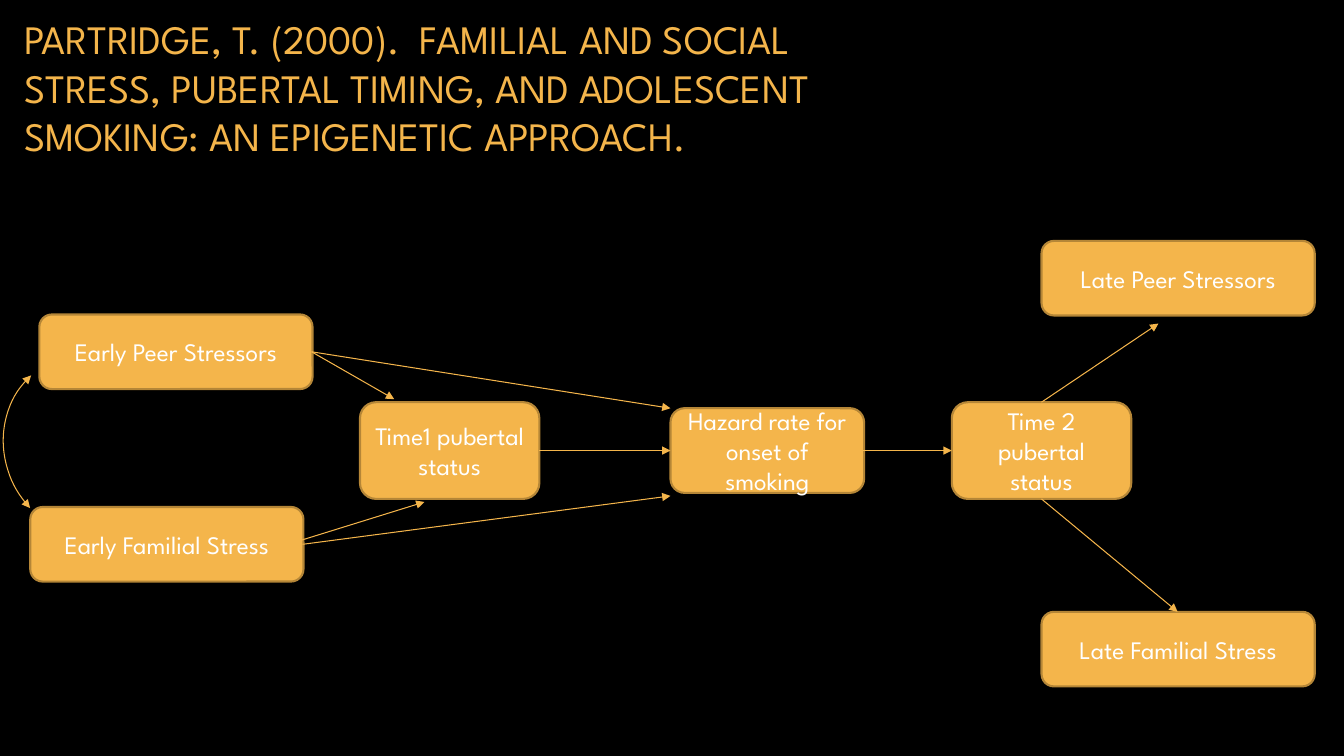
"""Build a path diagram slide on stress, pubertal timing and adolescent smoking."""
import lxml.etree
import pptx
import pptx.dml.color
import pptx.enum.shapes
import pptx.enum.text
import pptx.oxml.ns
import pptx.util

Inches = pptx.util.Inches
Pt = pptx.util.Pt
RGBColor = pptx.dml.color.RGBColor

BLACK = RGBColor(0x00, 0x00, 0x00)
WHITE = RGBColor(0xFF, 0xFF, 0xFF)
AMBER = RGBColor(0xF4, 0xB5, 0x4B)
BROWN = RGBColor(0xB5, 0x86, 0x37)
FONT = "League Spartan"

TITLE = (
    "PARTRIDGE, T. (2000).  FAMILIAL AND SOCIAL STRESS, PUBERTAL TIMING, "
    "AND ADOLESCENT SMOKING: AN EPIGENETIC APPROACH."
)
STRESS_SIZE = (2.71, 0.74)
STATUS_SIZE = (1.78, 0.96)
HAZARD_SIZE = (1.92, 0.84)
FACTORS = [
    ("Early Peer Stressors", (0.39, 3.12), STRESS_SIZE),
    ("Early Familial Stress", (0.3, 5.03), STRESS_SIZE),
    ("Time1 pubertal status", (3.57, 3.99), STATUS_SIZE),
    ("Hazard rate for onset of smoking", (6.65, 4.05), HAZARD_SIZE),
    ("Time 2 pubertal status", (9.44, 3.99), STATUS_SIZE),
    ("Late Peer Stressors", (10.33, 2.39), STRESS_SIZE),
    ("Late Familial Stress", (10.33, 6.07), STRESS_SIZE),
]
PATHS = [
    ((3.09, 3.49), (3.91, 3.96)),
    ((2.76, 5.43), (4.21, 4.98)),
    ((5.35, 4.47), (6.65, 4.47)),
    ((3.0, 5.4), (6.65, 4.92)),
    ((3.09, 3.49), (6.65, 4.05)),
    ((8.56, 4.47), (9.44, 4.47)),
    ((10.33, 3.99), (11.49, 3.21)),
    ((10.33, 4.95), (11.68, 6.07)),
]


def add_run(para, text, size, color):
    span = para.add_run()
    span.text = text
    span.font.name = FONT
    span.font.size = Pt(size)
    span.font.color.rgb = color


def set_title(page):
    title = page.shapes.title
    title.left, title.top = Inches(0.14), Inches(0.2)
    title.width, title.height = Inches(8.86), Inches(1.33)
    frame = title.text_frame
    frame.word_wrap = True
    frame.auto_size = pptx.enum.text.MSO_AUTO_SIZE.NONE
    frame.vertical_anchor = pptx.enum.text.MSO_ANCHOR.MIDDLE
    para = frame.paragraphs[0]
    para.alignment = pptx.enum.text.PP_ALIGN.LEFT
    add_run(para, TITLE, 28.8, AMBER)


def add_factor(page, text, position, size):
    box = page.shapes.add_shape(
        pptx.enum.shapes.MSO_SHAPE.ROUNDED_RECTANGLE,
        *map(Inches, position + size),
    )
    box.shadow.inherit = False
    box.fill.solid()
    box.fill.fore_color.rgb = AMBER
    box.line.color.rgb = BROWN
    box.line.width = Pt(1.5)
    frame = box.text_frame
    frame.word_wrap = True
    frame.vertical_anchor = pptx.enum.text.MSO_ANCHOR.MIDDLE
    para = frame.paragraphs[0]
    para.alignment = pptx.enum.text.PP_ALIGN.CENTER
    add_run(para, text, 18, WHITE)


def style_arrow(arrow, *ends):
    arrow.line.color.rgb = AMBER
    arrow.line.width = Pt(0.75)
    outline = arrow.get_or_add_ln()
    for end in ends:
        tag = pptx.oxml.ns.qn(f"a:{end}")
        lxml.etree.SubElement(outline, tag, type="triangle")


def add_path(page, start, end):
    arrow = page.shapes.add_connector(
        pptx.enum.shapes.MSO_CONNECTOR.STRAIGHT, *map(Inches, start + end)
    )
    style_arrow(arrow, "tailEnd")
    properties = arrow.element.spPr
    lxml.etree.SubElement(properties, pptx.oxml.ns.qn("a:effectLst"))


def add_correlation(page):
    arc = page.shapes.add_shape(
        pptx.enum.shapes.MSO_SHAPE.ARC,
        *map(Inches, (0, 3.53, 1.92, 1.8)),
    )
    arc.rotation = 227.3
    arc.shadow.inherit = False
    arc.fill.background()
    style_arrow(arc, "headEnd", "tailEnd")


def main():
    deck = pptx.Presentation()
    deck.slide_width, deck.slide_height = Inches(13.33), Inches(7.5)
    page = deck.slides.add_slide(deck.slide_layouts.get_by_name("Title Only"))
    page.background.fill.solid()
    page.background.fill.fore_color.rgb = BLACK
    set_title(page)
    for text, position, size in FACTORS:
        add_factor(page, text, position, size)
    for start, end in PATHS:
        add_path(page, start, end)
    add_correlation(page)
    deck.save("out.pptx")


if __name__ == "__main__":
    main()
